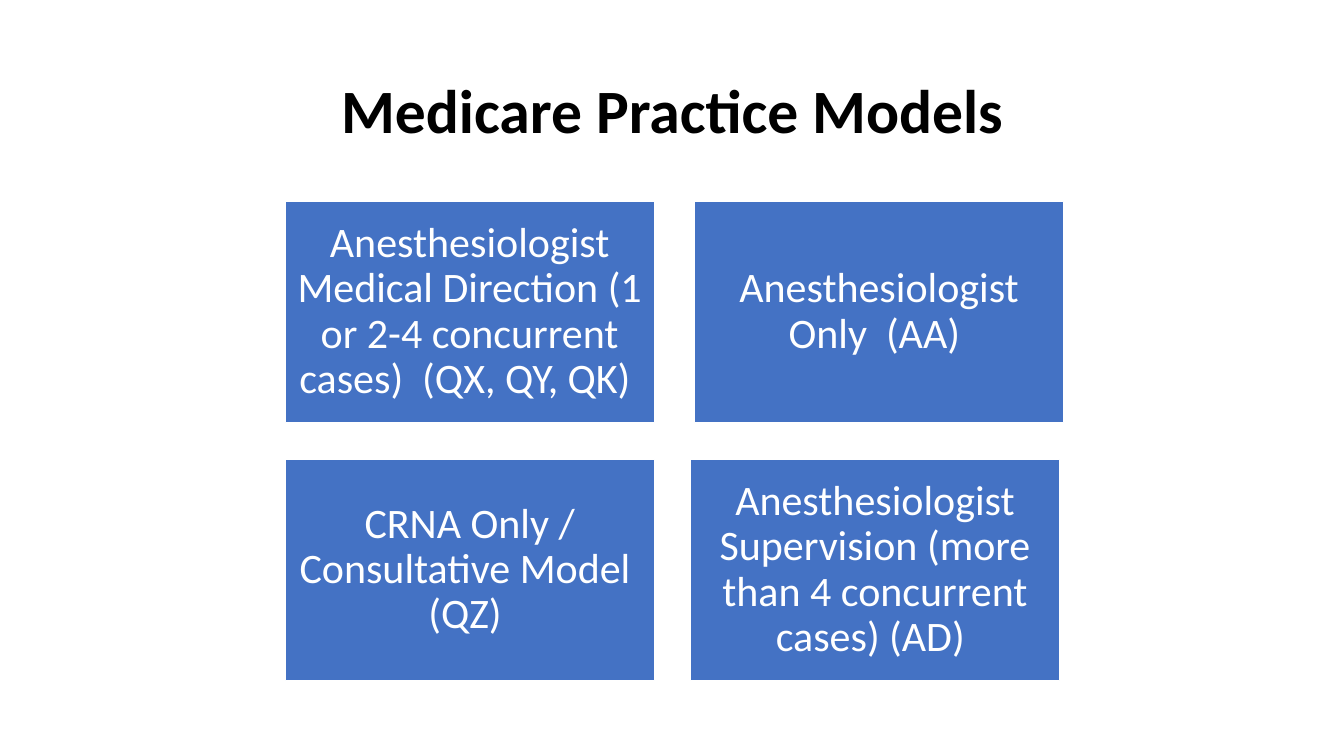
from pptx import Presentation
from pptx.dml.color import RGBColor
from pptx.enum.shapes import MSO_SHAPE as Shape
from pptx.enum.text import MSO_ANCHOR as Anchor, PP_ALIGN as Align
from pptx.util import Inches, Pt

TITLE = "Medicare Practice Models"
MODEL_ROWS = [
    (2, [
        (2.83, "Anesthesiologist Medical Direction (1 or 2-4 concurrent cases)  (QX, QY, QK) "),
        (6.89, "Anesthesiologist Only  (AA) "),
    ]),
    (4.56, [
        (2.83, "CRNA Only / Consultative Model  (QZ) "),
        (6.85, "Anesthesiologist Supervision (more than 4 concurrent cases) (AD) "),
    ]),
]
COLORS = {"title": "000000", "box": "4472C4", "white": "FFFFFF"}
FONT = "Calibri"
BOX_WIDTH, BOX_HEIGHT, BOX_INSET = 3.66, 2.19, 0.12


def color(name):
    return RGBColor.from_string(COLORS[name])


def write(frame, text, size, ink, bold=False):
    frame.word_wrap = True
    frame.vertical_anchor = Anchor.MIDDLE
    para = frame.paragraphs[0]
    para.alignment = Align.CENTER
    para.line_spacing = 0.9
    span = para.add_run()
    span.text = text
    span.font.name = FONT
    span.font.size = Pt(size)
    span.font.bold = bold
    span.font.color.rgb = color(ink)


def add_model(page, left, top, text):
    box = page.shapes.add_shape(
        Shape.RECTANGLE, Inches(left), Inches(top), Inches(BOX_WIDTH), Inches(BOX_HEIGHT))
    box.shadow.inherit = False
    box.fill.solid()
    box.fill.fore_color.rgb = color("box")
    box.line.color.rgb = color("white")
    box.line.width = Pt(1)
    frame = box.text_frame
    frame.margin_left = frame.margin_right = Inches(BOX_INSET)
    frame.margin_top = frame.margin_bottom = Inches(BOX_INSET)
    write(frame, text, 30, "white")


def main():
    deck = Presentation()
    deck.slide_width, deck.slide_height = Inches(13.33), Inches(7.5)
    page = deck.slides.add_slide(deck.slide_layouts[5])
    title = page.shapes.title
    title.left, title.top = Inches(0.92), Inches(0.4)
    title.width, title.height = Inches(11.5), Inches(1.45)
    write(title.text_frame, TITLE, 44, "title", bold=True)
    for top, models in MODEL_ROWS:
        for left, text in models:
            add_model(page, left, top, text)
    deck.save("out.pptx")


if __name__ == "__main__":
    main()
